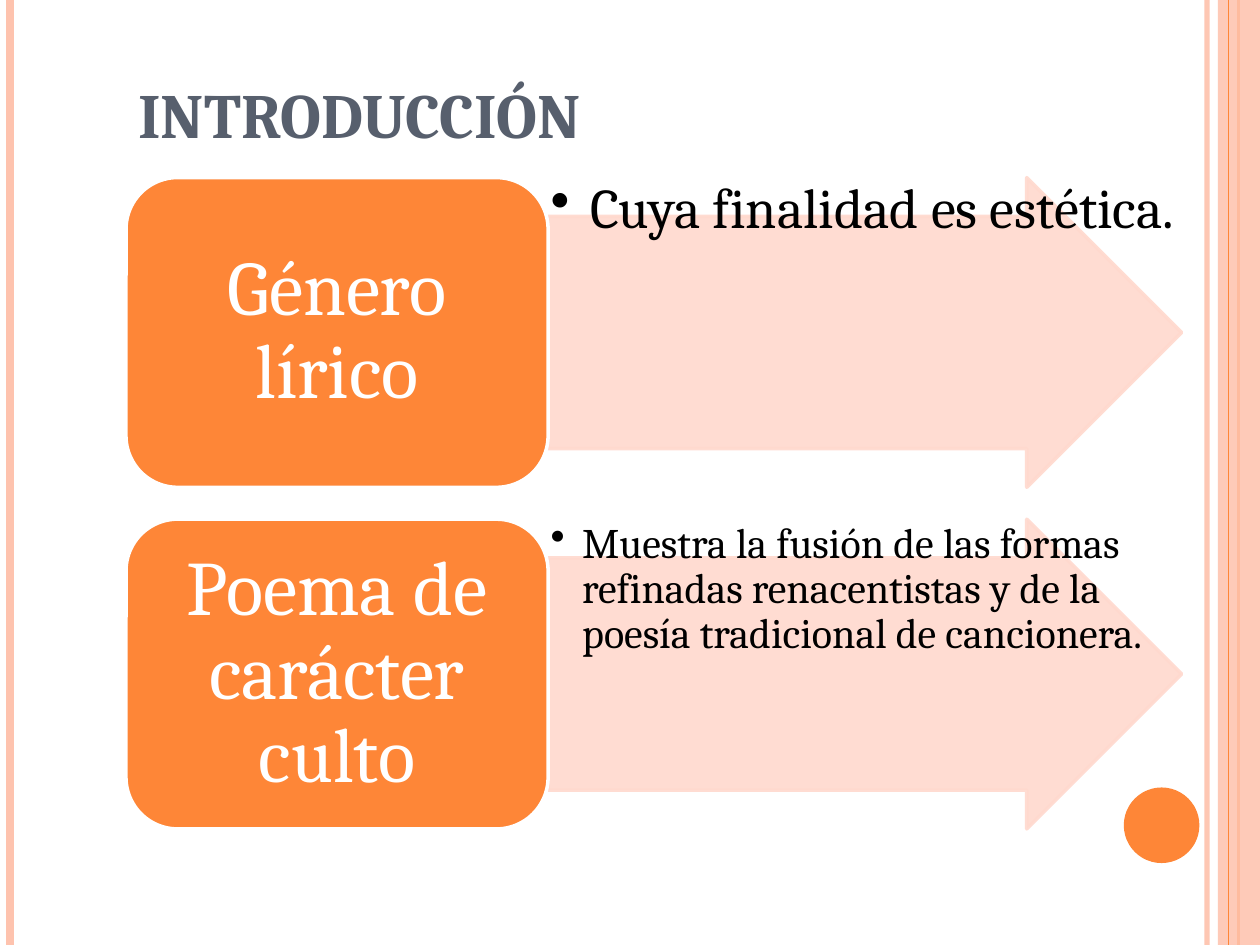
from lxml import etree
from pptx import Presentation
from pptx.dml.color import RGBColor
from pptx.enum import shapes, text
from pptx.oxml import ns
from pptx.util import Pt

FONT = "Cambria"
HEX = {"orange": "FE8637", "peach": "FEC3AE", "pale": "FFD9CE",
       "slate": "575F6D", "white": "FFFFFF", "black": "000000"}
TITLE = "INTRODUCCIÓN"
# label, detail, detail size, bullet indent
ROWS = [
    ("Género lírico", "Cuya finalidad es estética.", 32, 22.5),
    ("Poema de carácter culto",
     "Muestra la fusión de las formas refinadas renacentistas y de la "
     "poesía tradicional de cancionera.", 24, 18),
]
# x, colour, width, opacity
EDGES = [(689.75, "peach", 3, 93), (5.75, "peach", 4.5, 100),
         (707.75, "orange", 1.5, 100)]
INNER = (702, "orange", 0.75, 100)

WIDE, HIGH = 720, 540
LEFT, TOP, MID = 72, 101.5, 313.2
LABEL_W, ARROW_W, ROW_H, STEP = MID - LEFT, 362, 177, 195.2


def rgb(name):
    return RGBColor.from_string(HEX[name])


def sub(parent, tag, **attrs):
    return etree.SubElement(parent, ns.qn(tag), attrs)


def fade(item, pct):
    """Give every colour of the item this opacity in percent."""
    if pct < 100:
        for clr in list(item._element.spPr.iter(ns.qn("a:srgbClr"))):
            sub(clr, "a:alpha", val=str(pct * 1000))


def rule(slide, x, color, width, pct):
    """Draw a full-height vertical line."""
    line = slide.shapes.add_connector(
        shapes.MSO_CONNECTOR.STRAIGHT, Pt(x), 0, Pt(x), Pt(HIGH))
    line.line.color.rgb = rgb(color)
    line.line.width = Pt(width)
    fade(line, pct)
    sub(line._element.spPr, "a:effectLst")


def block(slide, kind, box, fill, edge=None, pct=100, adj=()):
    shape = slide.shapes.add_shape(kind, *map(Pt, box))
    shape.shadow.inherit = False
    shape.fill.solid()
    shape.fill.fore_color.rgb = rgb(fill)
    if edge:
        shape.line.color.rgb = rgb(edge)
        shape.line.width = Pt(2)
    else:
        shape.line.fill.background()
    for i, value in enumerate(adj):
        shape.adjustments[i] = value
    fade(shape, pct)
    return shape


def write(shape, words, size, color, anchor, pad, bold=False):
    """Fill the text frame with one paragraph and return it."""
    frame = shape.text_frame
    frame.word_wrap = True
    frame.vertical_anchor = anchor
    frame.margin_left = frame.margin_right = Pt(pad[0])
    frame.margin_top = frame.margin_bottom = Pt(pad[1])
    frame.text = words
    para = frame.paragraphs[0]
    font = para.runs[0].font
    font.name, font.size, font.bold = FONT, Pt(size), bold
    font.color.rgb = rgb(color)
    return para


def bullet(para, indent):
    props = para._p.get_or_add_pPr()
    props.set("marL", str(Pt(indent)))
    props.set("indent", str(-Pt(indent)))
    sub(props, "a:buChar", char="•")


def row(slide, y, label, detail, size, indent):
    kind, anchor = shapes.MSO_SHAPE, text.MSO_ANCHOR
    right = (MID, y, ARROW_W, ROW_H)
    block(slide, kind.RIGHT_ARROW, right, "pale", "pale", 90, (0.75, 0.5))
    note = slide.shapes.add_textbox(*map(Pt, right))
    para = write(note, detail, size, "black", anchor.TOP, (1.5, 1.5))
    para.line_spacing = 0.9
    bullet(para, indent)

    card = block(slide, kind.ROUNDED_RECTANGLE, (LEFT, y, LABEL_W, ROW_H),
                 "orange", "white")
    para = write(card, label, 44, "white", anchor.MIDDLE, (4.5, 0))
    para.line_spacing = 0.9
    para.alignment = text.PP_ALIGN.CENTER


def main():
    deck = Presentation()
    deck.slide_width, deck.slide_height = Pt(WIDE), Pt(HIGH)
    slide = deck.slides.add_slide(deck.slide_layouts[6])

    for edge in EDGES:
        rule(slide, *edge)
    block(slide, shapes.MSO_SHAPE.RECTANGLE, (696, 0, 24, HIGH),
          "peach", pct=87)
    rule(slide, *INNER)
    block(slide, shapes.MSO_SHAPE.OVAL, (642.2, 450, 43.2, 43.2), "orange")

    title = slide.shapes.add_textbox(Pt(LEFT), Pt(21.6), Pt(612), Pt(68.4))
    write(title, TITLE, 36, "slate", text.MSO_ANCHOR.BOTTOM, (7.2, 3.6), True)
    for i, item in enumerate(ROWS):
        row(slide, TOP + i * STEP, *item)
    deck.save("out.pptx")


if __name__ == "__main__":
    main()
